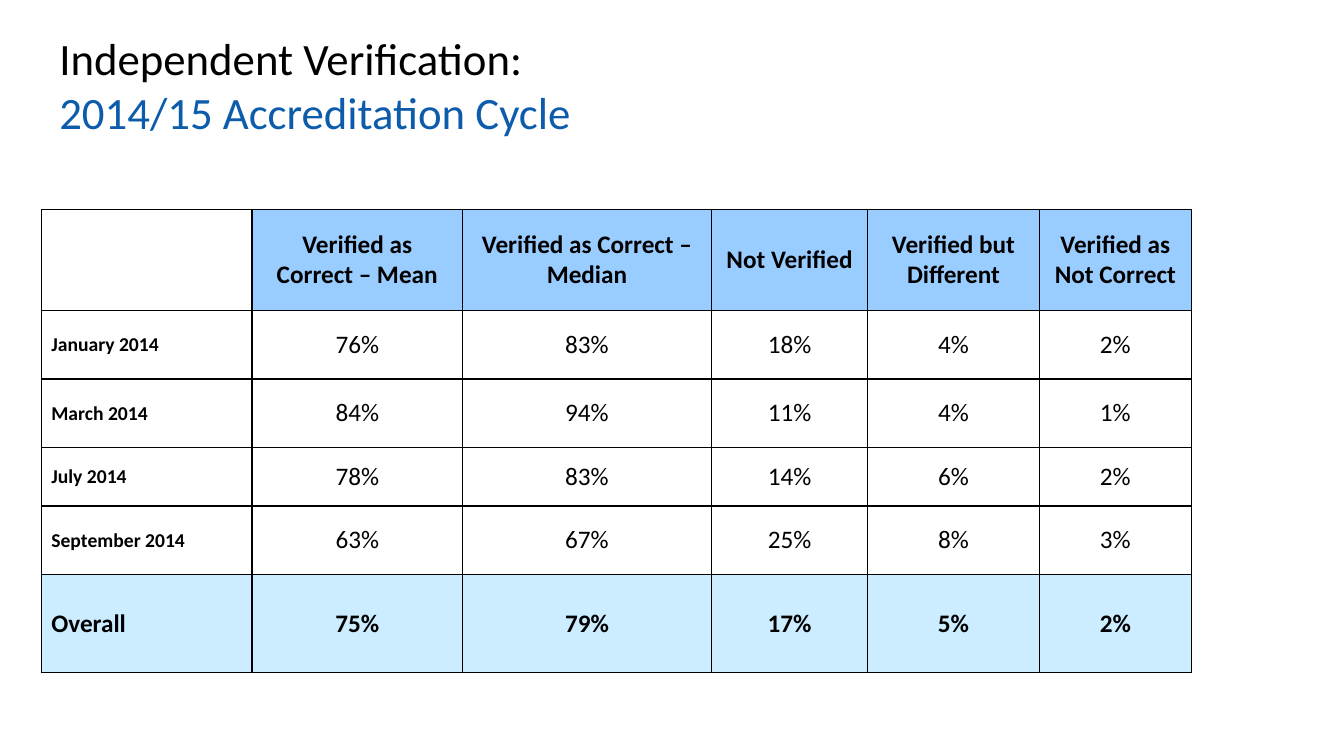
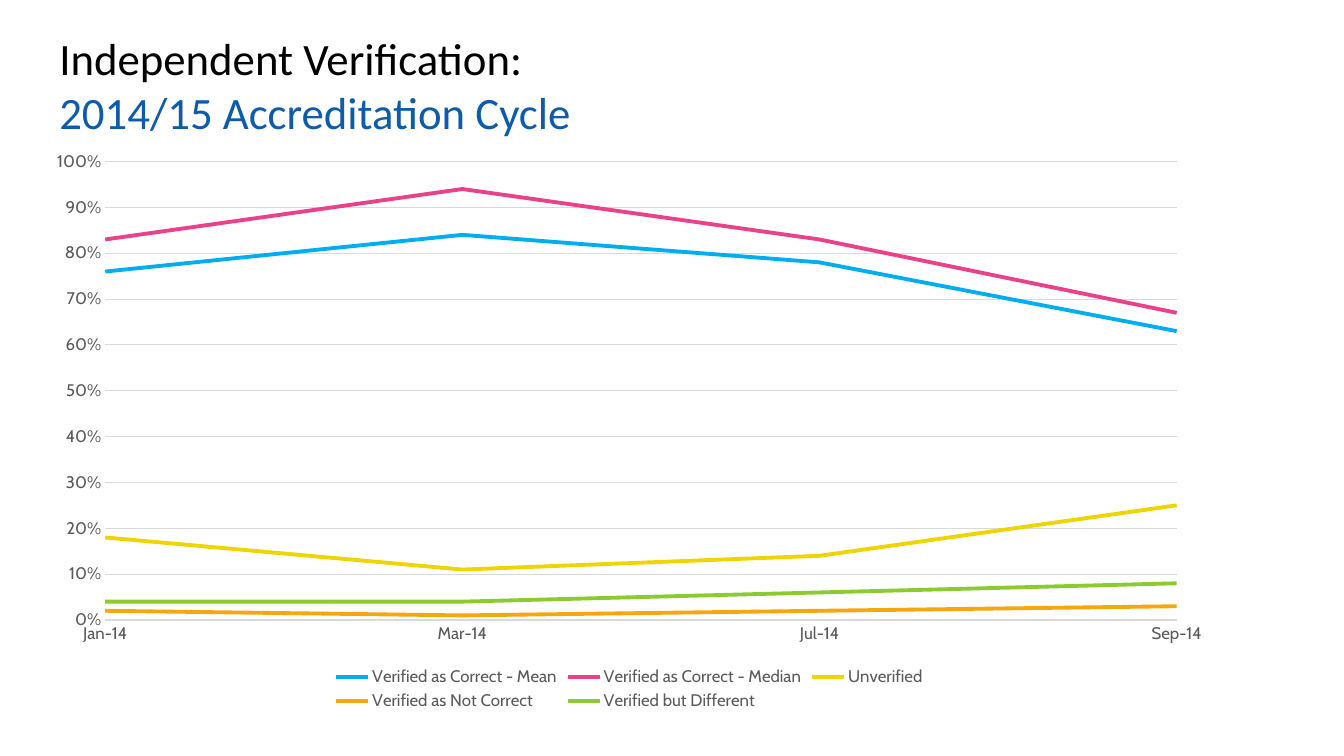
import pptx
import pptx.chart.data
import pptx.dml.color
import pptx.enum.chart
import pptx.enum.text
import pptx.oxml
import pptx.oxml.ns
import pptx.util
from pptx.util import Cm, Pt

HUES = {
    "ink": "000000", "title": "0C5CAB", "head": "99CCFF", "total": "CCECFF",
    "label": "595959", "grid": "D9D9D9",
    "mean": "00AEEF", "median": "EA428A", "none": "EED500",
    "wrong": "F5A70D", "differ": "8BCB30",
}
TEXT, PLOT = "Calibri", "Cabin"

TITLE = [("Independent Verification:", "ink"), ("2014/15 Accreditation Cycle", "title")]
MONTHS = ["January 2014", "March 2014", "July 2014", "September 2014"]
TICKS = ["Jan-14", "Mar-14", "Jul-14", "Sep-14"]

# key: table heading, legend name, percent by month, overall percent
RATES = {
    "mean": ("Verified as Correct – Mean", "Verified as Correct - Mean", [76, 84, 78, 63], 75),
    "median": ("Verified as Correct – Median", "Verified as Correct - Median", [83, 94, 83, 67], 79),
    "none": ("Not Verified", "Unverified", [18, 11, 14, 25], 17),
    "differ": ("Verified but Different", "Verified but Different", [4, 4, 6, 8], 5),
    "wrong": ("Verified as Not Correct", "Verified as Not Correct", [2, 1, 2, 3], 2),
}
LINES = ["mean", "median", "none", "wrong", "differ"]
WIDTHS = [5.31, 5.31, 6.27, 3.94, 4.32, 3.84]
HEIGHTS = [2.54, 1.73, 1.73, 1.47, 1.73, 2.46]


def rgb(hue):
    return pptx.dml.color.RGBColor.from_string(HUES[hue])


def style(font, size, hue, face, bold=False):
    font.size, font.name, font.bold = Pt(size), face, bold
    font.color.rgb = rgb(hue)


def add_slide(deck):
    """Add a slide with the shared two-line title."""
    slide = deck.slides.add_slide(deck.slide_layouts[5])
    title = slide.shapes.title
    title.left, title.top, title.width, title.height = Cm(1.24), Cm(0.64), Cm(28.8), Cm(3)
    frame = title.text_frame
    frame.auto_size = pptx.enum.text.MSO_AUTO_SIZE.NONE
    frame.vertical_anchor = pptx.enum.text.MSO_ANCHOR.TOP
    for i, (text, hue) in enumerate(TITLE):
        para = frame.add_paragraph() if i else frame.paragraphs[0]
        para.alignment = pptx.enum.text.PP_ALIGN.LEFT
        run = para.add_run()
        run.text = text
        style(run.font, 32, hue, TEXT)
    return slide


def add_edges(cell):
    """Draw a thin line on all four sides of a cell."""
    props = cell._tc.get_or_add_tcPr()
    for side in "LRTB":
        props.append(pptx.oxml.parse_xml(
            f'<a:ln{side} {pptx.oxml.ns.nsdecls("a")} w="{Pt(1)}"><a:solidFill>'
            f'<a:srgbClr val="{HUES["ink"]}"/></a:solidFill></a:ln{side}>'))


def fill_cell(cell, text, row, col):
    last = len(HEIGHTS) - 1
    add_edges(cell)
    hue = "total" if row == last else "head" if row == 0 and col else None
    if hue:
        cell.fill.solid()
        cell.fill.fore_color.rgb = rgb(hue)
    else:
        cell.fill.background()
    cell.vertical_anchor = pptx.enum.text.MSO_ANCHOR.MIDDLE
    if not text:
        return
    para = cell.text_frame.paragraphs[0]
    align = pptx.enum.text.PP_ALIGN
    para.alignment = align.CENTER if col else align.LEFT
    run = para.add_run()
    run.text = text
    month = col == 0 and row < last
    style(run.font, 14 if month else 18, "ink", TEXT, row in (0, last) or col == 0)


def add_rates(slide):
    cols = [["", *MONTHS, "Overall"]]
    for head, _, vals, total in RATES.values():
        cols.append([head, *(f"{val}%" for val in [*vals, total])])
    table = slide.shapes.add_table(
        len(HEIGHTS), len(WIDTHS), Cm(1.04), Cm(5.28),
        Cm(sum(WIDTHS)), Cm(sum(HEIGHTS))).table
    table.first_row = table.horz_banding = False
    for row, height in zip(table.rows, HEIGHTS):
        row.height = Cm(height)
    for c, (width, texts) in enumerate(zip(WIDTHS, cols)):
        table.columns[c].width = Cm(width)
        for r, text in enumerate(texts):
            fill_cell(table.cell(r, c), text, r, c)


def add_trend(slide):
    enum = pptx.enum.chart
    data = pptx.chart.data.CategoryChartData(number_format="0%")
    data.categories = TICKS
    for key in LINES:
        _, name, vals, _ = RATES[key]
        data.add_series(name, [val / 100 for val in vals])
    chart = slide.shapes.add_chart(
        enum.XL_CHART_TYPE.LINE, Cm(0.84), Cm(3.53), Cm(30.05), Cm(14.48), data).chart
    style(chart.font, 10, "ink", PLOT)
    chart.has_title = False
    chart.has_legend = True
    chart.legend.position = enum.XL_LEGEND_POSITION.BOTTOM
    chart.legend.include_in_layout = False
    style(chart.legend.font, 12, "label", PLOT)

    plot = chart.plots[0]
    plot.vary_by_categories = False
    for key, line in zip(LINES, plot.series):
        line.smooth = False
        line.format.line.width = Pt(2.75)
        line.format.line.color.rgb = rgb(key)

    base, scale = chart.category_axis, chart.value_axis
    for axis in (base, scale):
        axis.major_tick_mark = axis.minor_tick_mark = enum.XL_TICK_MARK.NONE
        style(axis.tick_labels.font, 12, "label", PLOT)
    base.format.line.color.rgb = rgb("grid")
    base.format.line.width = Pt(1)
    scale.format.line.fill.background()
    scale.minimum_scale, scale.maximum_scale, scale.major_unit = 0, 1, 0.1
    scale.tick_labels.number_format = "0%"
    scale.tick_labels.number_format_is_linked = False
    grid = scale.major_gridlines.format.line
    grid.color.rgb, grid.width = rgb("grid"), Pt(0.75)
    start_at_edge(scale)


def start_at_edge(axis):
    """Let the lines run from edge to edge of the plot."""
    root, name = axis._element, pptx.oxml.ns.qn("c:crossBetween")
    for old in root.findall(name):
        root.remove(old)
    root.find(pptx.oxml.ns.qn("c:crosses")).addnext(pptx.oxml.parse_xml(
        f'<c:crossBetween {pptx.oxml.ns.nsdecls("c")} val="midCat"/>'))


def main():
    deck = pptx.Presentation()
    deck.slide_width, deck.slide_height = Cm(33.87), Cm(19.05)
    add_rates(add_slide(deck))
    add_trend(add_slide(deck))
    deck.save("out.pptx")


if __name__ == "__main__":
    main()
